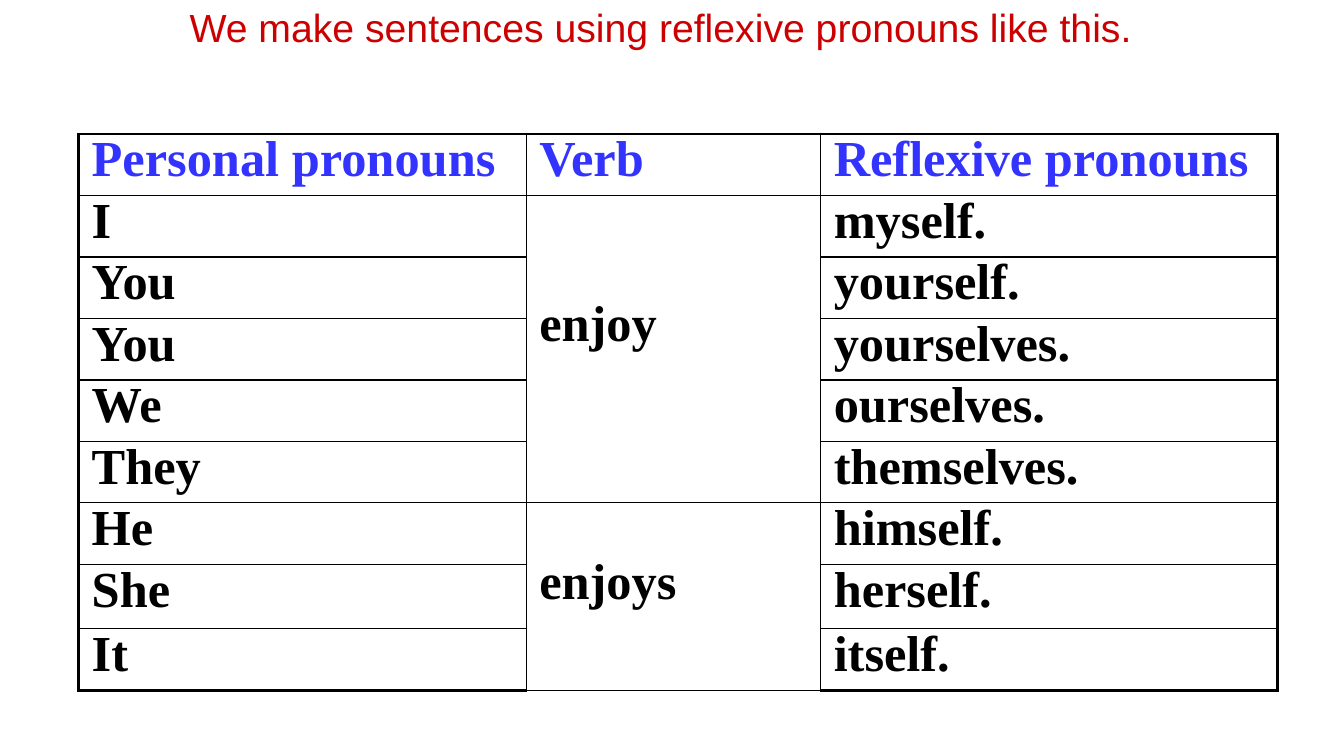
from dataclasses import dataclass

from lxml.etree import SubElement
from pptx import Presentation
from pptx.dml.color import RGBColor
from pptx.enum.text import MSO_ANCHOR, PP_ALIGN
from pptx.oxml.ns import qn
from pptx.util import Inches, Pt


@dataclass(frozen=True)
class Theme:
    title_color: RGBColor = RGBColor(0xCC, 0x00, 0x00)
    header_color: RGBColor = RGBColor(0x33, 0x33, 0xFF)
    body_color: RGBColor = RGBColor(0x00, 0x00, 0x00)
    title_font: str = "Arial"
    table_font: str = "Times New Roman"
    title_size: int = 28
    table_size: int = 36
    border_color: str = "000000"
    inner_border: float = 1
    outer_border: float = 2.25


THEME = Theme()
TITLE = "We make sentences using reflexive pronouns like this."
HEADERS = ["Personal pronouns", "Verb", "Reflexive pronouns"]
PRONOUNS = [
    ("I", "myself."),
    ("You", "yourself."),
    ("You", "yourselves."),
    ("We", "ourselves."),
    ("They", "themselves."),
    ("He", "himself."),
    ("She", "herself."),
    ("It", "itself."),
]
# Verb, first row, last row, space above the word in inches
VERBS = [("enjoy", 1, 5, 1.02), ("enjoys", 6, 8, 0.53)]
COLUMN_WIDTHS = [4.44, 2.92, 4.53]
ROW_HEIGHTS = [0.61] * 7 + [0.64, 0.61]


def add_title(page, text):
    title = page.shapes.title
    title.left, title.top = Inches(0.67), Inches(0.01)
    title.width, title.height = Inches(11.76), Inches(0.55)
    frame = title.text_frame
    frame.text = text
    frame.word_wrap = True
    frame.vertical_anchor = MSO_ANCHOR.MIDDLE
    para = frame.paragraphs[0]
    para.alignment = PP_ALIGN.CENTER
    para.line_spacing = 0.95
    para.font.name = THEME.title_font
    para.font.size = Pt(THEME.title_size)
    para.font.color.rgb = THEME.title_color


def set_borders(cell, outer_sides):
    properties = cell._tc.get_or_add_tcPr()
    for side in "LRTB":
        width = THEME.outer_border if side in outer_sides else THEME.inner_border
        line = SubElement(properties, qn(f"a:ln{side}"), w=str(Pt(width)))
        fill = SubElement(line, qn("a:solidFill"))
        SubElement(fill, qn("a:srgbClr"), val=THEME.border_color)


def write_cell(cell, text, color, space_above=0):
    cell.text = text
    cell.margin_left = cell.margin_right = Inches(0.13)
    cell.margin_top = Inches(0.05 + space_above)
    cell.margin_bottom = Inches(0.05)
    para = cell.text_frame.paragraphs[0]
    para.line_spacing = 0.85
    para.font.name = THEME.table_font
    para.font.size = Pt(THEME.table_size)
    para.font.bold = True
    para.font.color.rgb = color


def add_pronoun_table(page):
    frame = page.shapes.add_table(
        len(ROW_HEIGHTS), len(COLUMN_WIDTHS), Inches(0.78), Inches(1.33),
        Inches(sum(COLUMN_WIDTHS)), Inches(sum(ROW_HEIGHTS)))
    table = frame.table
    table.first_row = table.horz_banding = False
    for column, width in zip(table.columns, COLUMN_WIDTHS):
        column.width = Inches(width)
    for row, height in zip(table.rows, ROW_HEIGHTS):
        row.height = Inches(height)

    # Thick frame, thin inner lines, no fill
    last_row, last_column = len(ROW_HEIGHTS) - 1, len(COLUMN_WIDTHS) - 1
    for r in range(last_row + 1):
        for c in range(last_column + 1):
            edges = {"L": c == 0, "R": c == last_column, "T": r == 0, "B": r == last_row}
            cell = table.cell(r, c)
            set_borders(cell, [side for side, is_outer in edges.items() if is_outer])
            cell.fill.background()

    # Header and pronoun pairs
    for c, header in enumerate(HEADERS):
        write_cell(table.cell(0, c), header, THEME.header_color)
    for r, (personal, reflexive) in enumerate(PRONOUNS, start=1):
        write_cell(table.cell(r, 0), personal, THEME.body_color)
        write_cell(table.cell(r, 2), reflexive, THEME.body_color)

    # Verbs shared by several rows
    for verb, first, last, space_above in VERBS:
        table.cell(first, 1).merge(table.cell(last, 1))
        write_cell(table.cell(first, 1), verb, THEME.body_color, space_above)


def main():
    deck = Presentation()
    deck.slide_width, deck.slide_height = Inches(13.33), Inches(7.5)
    page = deck.slides.add_slide(deck.slide_layouts.get_by_name("Title Only"))
    add_pronoun_table(page)
    add_title(page, TITLE)
    deck.save("out.pptx")


if __name__ == "__main__":
    main()
